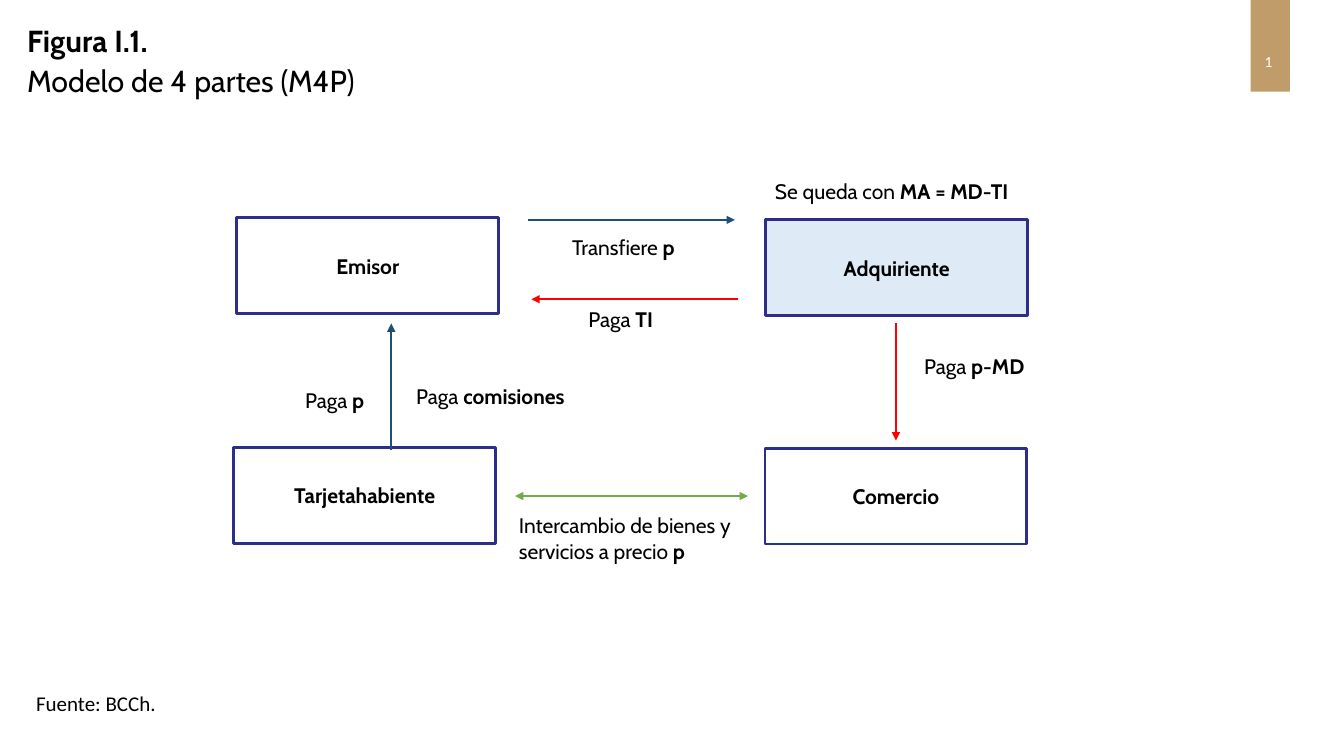
from dataclasses import dataclass
from lxml.etree import SubElement
from pptx import Presentation
from pptx.dml.color import RGBColor
from pptx.enum.shapes import MSO_CONNECTOR, MSO_SHAPE
from pptx.enum.text import MSO_ANCHOR, MSO_AUTO_SIZE, PP_ALIGN
from pptx.oxml.ns import qn
from pptx.util import Cm, Pt

TITLE = ["Figura I.1.", "Modelo de 4 partes (M4P)"]
SOURCE = "Fuente: BCCh."
PAGE_NUMBER = "1"

PARTIES = [
    ("Emisor", 5.97, 5.49, "white"),
    ("Adquiriente", 19.3, 5.54, "highlight"),
    ("Tarjetahabiente", 5.89, 11.28, "white"),
    ("Comercio", 19.28, 11.3, "white"),
]
PARTY_SIZE = (6.6, 2.41)

FLOWS = [
    ((13.31, 5.54), (18.52, 5.54), "blue", ["tailEnd"]),
    ((18.59, 7.54), (13.39, 7.54), "red", ["tailEnd"]),
    ((9.86, 11.33), (9.86, 8.15), "blue", ["tailEnd"]),
    ((22.58, 8.15), (22.58, 11.1), "red", ["tailEnd"]),
    ((12.98, 12.5), (18.85, 12.5), "green", ["headEnd", "tailEnd"]),
]

LABELS = [
    ("Se queda con ", "MA = MD-TI", (19.28, 4.37, 7.98, 1.07)),
    ("Transfiere ", "p", (14.17, 5.79, 5.97, 1.27)),
    ("Paga ", "TI", (14.58, 7.59, 5.97, 1.42)),
    ("Paga ", "p", (7.44, 9.65, 4.67, 1.52)),
    ("Paga ", "comisiones", (10.24, 9.55, 4.29, 0.94)),
    ("Paga ", "p-MD", (23.04, 8.79, 5.11, 1.42)),
    ("Intercambio de bienes y servicios a precio ", "p", (12.83, 12.8, 6.53, 2.57)),
]


@dataclass(frozen=True)
class Theme:
    white: str = "FFFFFF"
    black: str = "000000"
    highlight: str = "DEEBF7"
    border: str = "2D2D8A"
    blue: str = "1F4E79"
    red: str = "FF0000"
    green: str = "70AD47"
    gold: str = "BF9C69"
    font: str = "Cabin"
    plain_font: str = "Calibri"
    title_size: float = 21.7
    text_size: float = 15
    number_size: float = 11
    border_width: float = 2
    arrow_width: float = 1.5


THEME = Theme()


def colour(name):
    return RGBColor.from_string(getattr(THEME, name))


def style(run, size=THEME.text_size, font=THEME.font, ink="black", bold=False):
    run.font.size = Pt(size)
    run.font.name = font
    run.font.bold = bold
    run.font.color.rgb = colour(ink)


def add_rectangle(slide, bounds, fill):
    shape = slide.shapes.add_shape(MSO_SHAPE.RECTANGLE, *map(Cm, bounds))
    shape.shadow.inherit = False
    shape.fill.solid()
    shape.fill.fore_color.rgb = colour(fill)
    return shape


def add_text(slide, bounds, text):
    text_frame = slide.shapes.add_textbox(*map(Cm, bounds)).text_frame
    text_frame.word_wrap = True
    text_frame.text = text
    return text_frame.paragraphs[0]


def add_title(slide):
    title = slide.shapes.title
    title.left, title.top, title.width, title.height = map(Cm, (0.43, 0.69, 28.3, 2))
    text_frame = title.text_frame
    text_frame.text = "\n".join(TITLE)
    text_frame.auto_size = MSO_AUTO_SIZE.NONE
    text_frame.vertical_anchor = MSO_ANCHOR.TOP
    for index, paragraph in enumerate(text_frame.paragraphs):
        paragraph.alignment = PP_ALIGN.LEFT
        paragraph.line_spacing = 0.7
        paragraph.space_before = Pt(10 if index else 0)
        style(paragraph.runs[0], THEME.title_size, bold=index == 0)


def add_page_number(slide):
    tab = add_rectangle(slide, (31.52, 0, 0.99, 2.31), "gold")
    tab.line.fill.background()
    paragraph = add_text(slide, (30.99, 1.19, 1.96, 0.94), PAGE_NUMBER)
    paragraph.alignment = PP_ALIGN.CENTER
    style(paragraph.runs[0], THEME.number_size, THEME.plain_font, "white")


def add_party(slide, name, left, top, fill):
    shape = add_rectangle(slide, (left, top, *PARTY_SIZE), fill)
    shape.line.color.rgb = colour("border")
    shape.line.width = Pt(THEME.border_width)
    text_frame = shape.text_frame
    text_frame.text = name
    text_frame.vertical_anchor = MSO_ANCHOR.MIDDLE
    paragraph = text_frame.paragraphs[0]
    paragraph.alignment = PP_ALIGN.CENTER
    style(paragraph.runs[0], bold=True)


def add_flow(slide, start, end, ink, arrowheads):
    connector = slide.shapes.add_connector(
        MSO_CONNECTOR.STRAIGHT, *map(Cm, (*start, *end)))
    connector.line.color.rgb = colour(ink)
    connector.line.width = Pt(THEME.arrow_width)
    properties = connector.element.spPr
    line = properties.find(qn("a:ln"))
    for arrowhead in arrowheads:
        SubElement(line, qn(f"a:{arrowhead}"), type="triangle")
    SubElement(properties, qn("a:effectLst"))


def add_label(slide, text, emphasis, bounds):
    paragraph = add_text(slide, bounds, text)
    style(paragraph.runs[0])
    run = paragraph.add_run()
    run.text = emphasis
    style(run, bold=True)


def main():
    presentation = Presentation()
    presentation.slide_width = Cm(33.87)
    presentation.slide_height = Cm(19.05)
    slide = presentation.slides.add_slide(presentation.slide_layouts[5])
    add_page_number(slide)
    add_title(slide)
    source = add_text(slide, (0.66, 17.27, 4.19, 0.89), SOURCE)
    style(source.runs[0], font=THEME.plain_font)
    for party in PARTIES:
        add_party(slide, *party)
    for flow in FLOWS:
        add_flow(slide, *flow)
    for label in LABELS:
        add_label(slide, *label)
    presentation.save("out.pptx")


if __name__ == "__main__":
    main()
